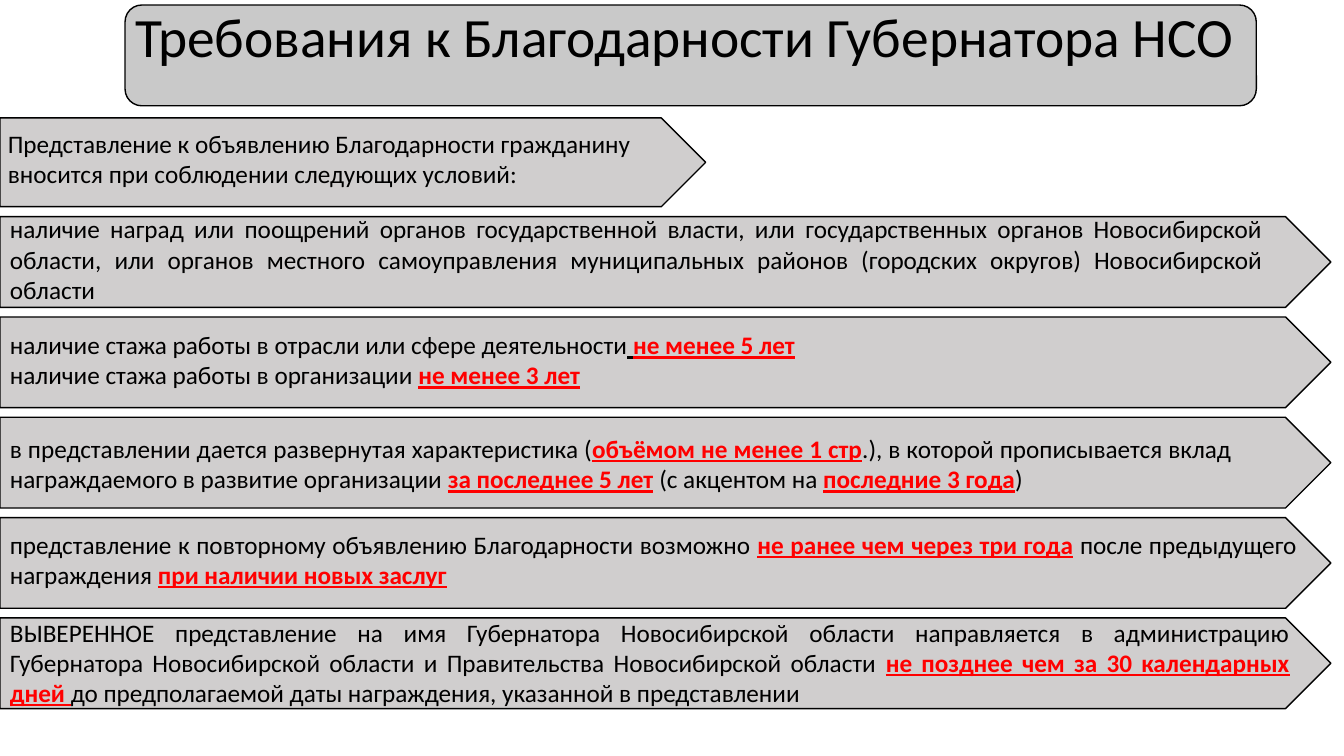
from lxml.etree import SubElement
from pptx import Presentation
from pptx.dml.color import RGBColor
from pptx.enum.shapes import MSO_SHAPE as Shape
from pptx.enum.text import MSO_ANCHOR as Anchor, MSO_AUTO_SIZE as AutoSize, PP_ALIGN as Align
from pptx.oxml.ns import qn
from pptx.util import Inches, Pt

FONT = "Calibri"
BLACK, RED, GREY = "000000", "FF0000", "D0CECE"
PLAIN, KEY, KEY_GAP = (BLACK, False), (RED, True), (BLACK, True)
LEFT, JUSTIFY = Align.LEFT, Align.JUSTIFY

TITLE = "Требования к Благодарности Губернатора НСО"

INTRO = [(LEFT, [("Представление к объявлению Благодарности гражданину вносится при соблюдении следующих условий:", PLAIN)])]

REQUIREMENTS = [
    ((2.07, 12.62, 1.01), [
        (JUSTIFY, [("наличие наград или поощрений органов государственной власти, или государственных органов Новосибирской области, или органов местного самоуправления муниципальных районов (городских округов) Новосибирской области", PLAIN)]),
    ]),
    ((3.22, 10.6, 0.71), [
        (LEFT, [("наличие стажа работы в отрасли или сфере деятельности", PLAIN),
                (" ", KEY_GAP),
                ("не менее 5 лет", KEY)]),
        (JUSTIFY, [("наличие стажа работы в организации ", PLAIN),
                   ("не менее 3 лет", KEY)]),
    ]),
    ((4.25, 12.31, 0.71), [
        (JUSTIFY, [("в представлении дается развернутая характеристика (", PLAIN),
                   ("объёмом не менее 1 стр", KEY),
                   (".), в которой прописывается вклад награждаемого в развитие организации ", PLAIN),
                   ("за последнее 5 лет", KEY),
                   (" (с акцентом на ", PLAIN),
                   ("последние 3 года", KEY),
                   (")", PLAIN)]),
    ]),
    ((5.2, 12.96, 0.71), [
        (JUSTIFY, [("представление к повторному объявлению Благодарности возможно ", PLAIN),
                   ("не ранее чем через три года", KEY),
                   (" после предыдущего награждения ", PLAIN),
                   ("при наличии новых заслуг", KEY)]),
    ]),
    ((6.07, 12.89, 1.01), [
        (JUSTIFY, [("ВЫВЕРЕННОЕ представление на имя Губернатора Новосибирской области направляется в администрацию Губернатора Новосибирской области и Правительства Новосибирской области ", PLAIN),
                   ("не позднее чем за 30 календарных дней ", KEY),
                   ("до предполагаемой даты награждения, указанной в представлении", PLAIN)]),
    ]),
]
ROW_TOP, ROW_PITCH = 2.15, 0.995


def color(value):
    return RGBColor.from_string(value)


def place(shape, left, top, width, height):
    shape.left, shape.top = Inches(left), Inches(top)
    shape.width, shape.height = Inches(width), Inches(height)


def add_span(para, text, size, style=PLAIN):
    span = para.add_run()
    span.text = text
    tint, strong = style
    span.font.name, span.font.size = FONT, Pt(size)
    span.font.color.rgb = color(tint)
    span.font.bold = span.font.underline = strong


def add_panel(page, kind, area, fill):
    panel = page.shapes.add_shape(kind, *map(Inches, area))
    panel.shadow.inherit = False
    panel.fill.solid()
    panel.fill.fore_color.rgb = color(fill)
    panel.line.color.rgb = color(BLACK)
    panel.line.width = Pt(1)
    return panel


def add_text(page, area, paragraphs):
    frame = page.shapes.add_textbox(*map(Inches, area)).text_frame
    frame.word_wrap = True
    frame.auto_size = AutoSize.SHAPE_TO_FIT_TEXT
    for index, (align, spans) in enumerate(paragraphs):
        para = frame.add_paragraph() if index else frame.paragraphs[0]
        para.alignment = align
        for text, style in spans:
            add_span(para, text, 18, style)


def add_title(page):
    title = page.shapes.title
    place(title, 1.24, 0.22, 11.22, 0.95)
    frame = title.text_frame
    frame.word_wrap = True
    frame.auto_size = AutoSize.NONE
    frame.vertical_anchor = Anchor.MIDDLE
    frame.margin_top, frame.margin_bottom = Inches(0.05), Inches(0.65)
    para = frame.paragraphs[0]
    para.alignment = LEFT
    para.line_spacing = 0.9
    add_span(para, TITLE, 39.6)

    plate = add_panel(page, Shape.ROUNDED_RECTANGLE, (1.24, 0.05, 11.22, 1), BLACK)
    tint = plate.fill._xPr.find(qn("a:solidFill"))[0]
    SubElement(tint, qn("a:alpha"), val="21000")


def main():
    deck = Presentation()
    deck.slide_width, deck.slide_height = Inches(13.33), Inches(7.5)
    page = deck.slides.add_slide(deck.slide_layouts[5])
    add_title(page)
    add_panel(page, Shape.PENTAGON, (0, 1.17, 7, 0.88), GREY)
    add_text(page, (-0.02, 1.22, 6.46, 0.71), INTRO)
    for row, ((top, width, height), paragraphs) in enumerate(REQUIREMENTS):
        add_panel(page, Shape.PENTAGON, (0, ROW_TOP + row * ROW_PITCH, 13.2, 0.9), GREY)
        add_text(page, (0, top, width, height), paragraphs)
    deck.save("out.pptx")


if __name__ == "__main__":
    main()
